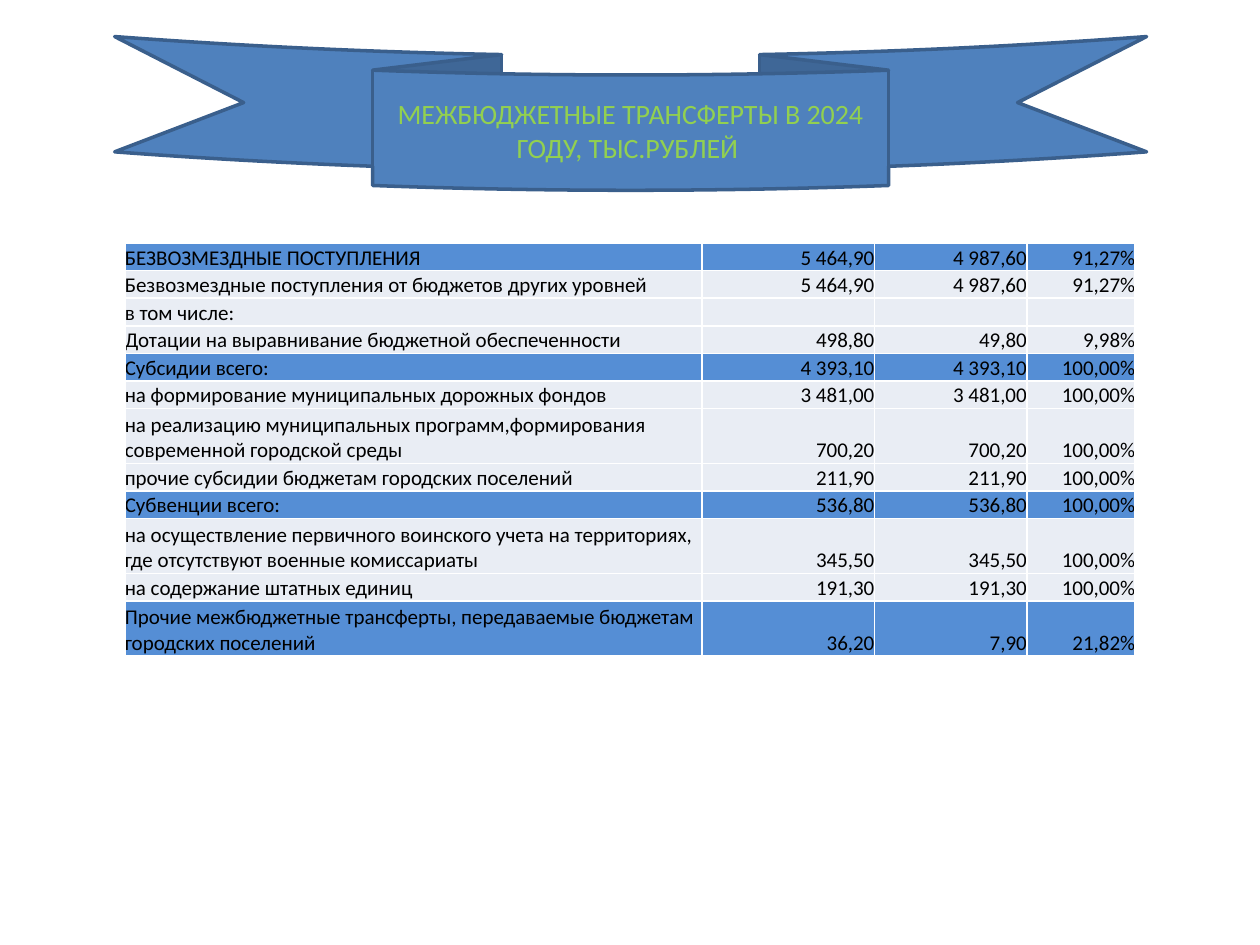
import pptx
import pptx.util
import pptx.dml.color
import pptx.enum.shapes
import pptx.enum.text
import pptx.oxml
import pptx.oxml.ns
from dataclasses import dataclass
from lxml import etree

Inches = pptx.util.Inches
Pt = pptx.util.Pt
RGB = pptx.dml.color.RGBColor.from_string
Align = pptx.enum.text.PP_ALIGN
Anchor = pptx.enum.text.MSO_ANCHOR
qn = pptx.oxml.ns.qn


@dataclass
class Theme:
    font: str = "Calibri"
    head: int = 16
    body: int = 12
    ribbon: str = "4F81BD"
    edge: str = "3A5F8C"
    title: str = "92D050"
    text: str = "000000"
    total: str = "558ED5"
    plain: str = "E9EDF4"
    rule: str = "FFFFFF"


theme = Theme()


def style(para, size, color, align):
    para.alignment = align
    para.font.name = theme.font
    para.font.size = Pt(size)
    para.font.color.rgb = RGB(color)


def border(cell):
    props = cell._tc.get_or_add_tcPr()
    for at, side in enumerate(("a:lnL", "a:lnR", "a:lnT", "a:lnB")):
        line = etree.Element(qn(side), w=str(Pt(1)))
        fill = etree.SubElement(line, qn("a:solidFill"))
        etree.SubElement(fill, qn("a:srgbClr"), val=theme.rule)
        props.insert(at, line)


deck = pptx.Presentation()
deck.slide_width = Inches(10)
deck.slide_height = Inches(7.5)
slide = deck.slides.add_slide(deck.slide_layouts[6])

rows = [
    ("БЕЗВОЗМЕЗДНЫЕ ПОСТУПЛЕНИЯ", "5 464,90", "4 987,60", "91,27%"),
    ("Безвозмездные поступления от бюджетов других уровней", "5 464,90", "4 987,60", "91,27%"),
    ("в том числе:", "", "", ""),
    ("Дотации на выравнивание бюджетной обеспеченности", "498,80", "49,80", "9,98%"),
    ("Субсидии всего:", "4 393,10", "4 393,10", "100,00%"),
    ("на формирование муниципальных дорожных фондов", "3 481,00", "3 481,00", "100,00%"),
    ("на реализацию муниципальных программ,формирования современной городской среды",
     "700,20", "700,20", "100,00%"),
    ("прочие субсидии бюджетам городских поселений", "211,90", "211,90", "100,00%"),
    ("Субвенции всего:", "536,80", "536,80", "100,00%"),
    ("на осуществление первичного воинского учета на территориях, где отсутствуют военные комиссариаты",
     "345,50", "345,50", "100,00%"),
    ("на содержание штатных единиц", "191,30", "191,30", "100,00%"),
    ("Прочие межбюджетные трансферты, передаваемые бюджетам городских поселений",
     "36,20", "7,90", "21,82%"),
]
totals = {0, 4, 8, 11}
tall = {6, 9, 11}
widths = (4.58, 1.37, 1.21, 0.86)
height = Inches(3.28)
unit = height // (len(rows) + len(tall))

frame = slide.shapes.add_table(
    len(rows), len(widths), Inches(0.99), Inches(1.93), Inches(sum(widths)), height)
table = frame.table
table.first_row = False
table.horz_banding = False
for column, width in zip(table.columns, widths):
    column.width = Inches(width)

for r, row in enumerate(rows):
    table.rows[r].height = unit * (2 if r in tall else 1)
    for c, text in enumerate(row):
        cell = table.cell(r, c)
        cell.margin_left = cell.margin_right = 0
        cell.margin_top = cell.margin_bottom = 0
        cell.vertical_anchor = Anchor.BOTTOM
        cell.fill.solid()
        cell.fill.fore_color.rgb = RGB(theme.total if r in totals else theme.plain)
        border(cell)
        cell.text = text
        para = cell.text_frame.paragraphs[0]
        style(para, theme.body, theme.text, Align.RIGHT if c else Align.LEFT)
        if not text:
            etree.SubElement(para._p, qn("a:endParaRPr"), sz=str(theme.body * 100))

ribbon = slide.shapes.add_shape(
    pptx.enum.shapes.MSO_SHAPE.CURVED_DOWN_RIBBON,
    Inches(0.91), Inches(0.29), Inches(8.19), Inches(1.22))
ribbon.shadow.inherit = False
ribbon.fill.solid()
ribbon.fill.fore_color.rgb = RGB(theme.ribbon)
ribbon.line.color.rgb = RGB(theme.edge)
ribbon.line.width = Pt(2)
title = ribbon.text_frame
title.word_wrap = True
title.vertical_anchor = Anchor.MIDDLE
title.text = "МЕЖБЮДЖЕТНЫЕ ТРАНСФЕРТЫ В 2024 ГОДУ, ТЫС.РУБЛЕЙ "
style(title.paragraphs[0], theme.head, theme.title, Align.CENTER)

deck.save("out.pptx")
